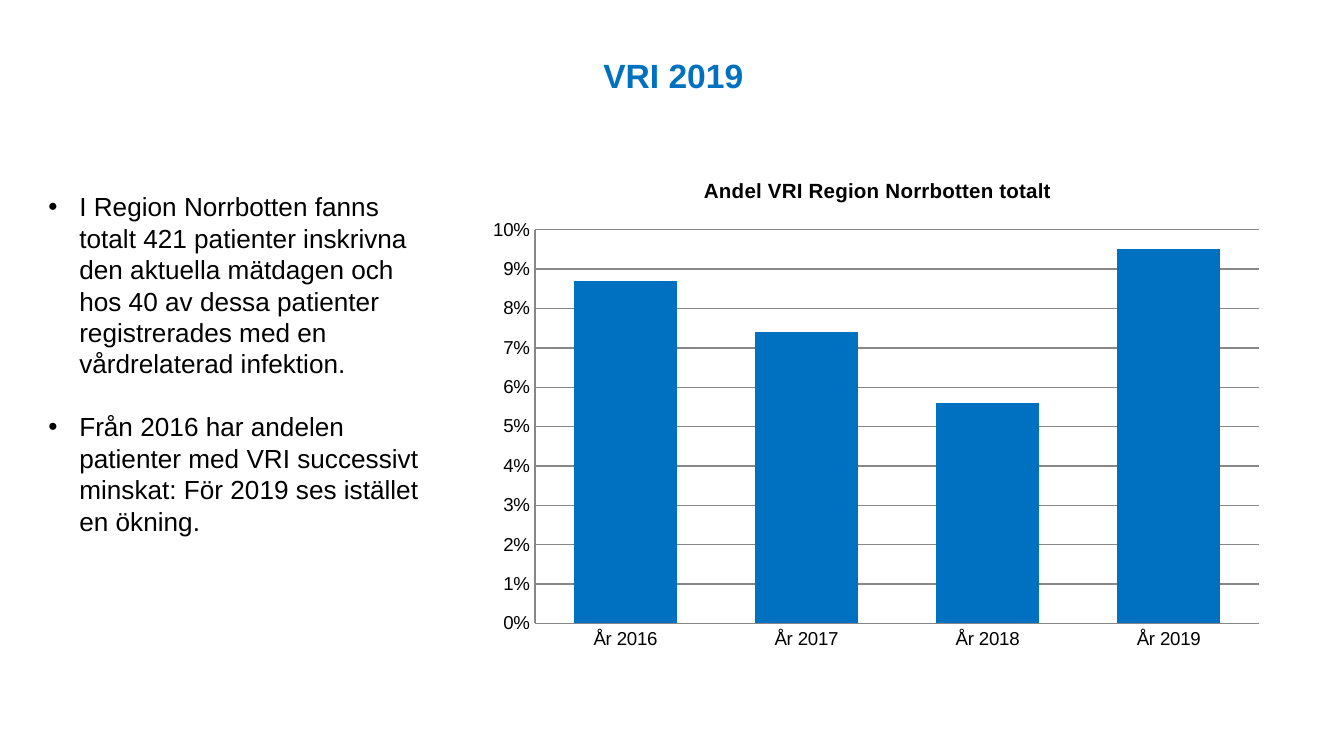
from lxml.etree import SubElement
from pptx import Presentation
from pptx.chart.data import CategoryChartData
from pptx.dml.color import RGBColor
from pptx.enum.chart import XL_CHART_TYPE, XL_TICK_MARK
from pptx.enum.text import MSO_ANCHOR, PP_ALIGN
from pptx.oxml import parse_xml
from pptx.oxml.ns import nsdecls, qn
from pptx.util import Inches, Pt

WIDTH = 10
HEIGHT = WIDTH * 9 / 16
FONT = "Arial"
BLUE, BLACK, GREY = "0070C0", "000000", "878787"

HEADING = "VRI 2019"
FINDINGS = [
    "I Region Norrbotten fanns totalt 421 patienter inskrivna den aktuella mätdagen "
    "och hos 40 av dessa patienter registrerades med en vårdrelaterad infektion.",
    "Från 2016 har andelen patienter med VRI successivt minskat: "
    "För 2019 ses istället en ökning.",
]
CHART_TITLE = "Andel VRI Region Norrbotten totalt"
SERIES_NAME = "Series 1"
SHARES = {"År 2016": 0.087, "År 2017": 0.074, "År 2018": 0.056, "År 2019": 0.095}
CHART_BOX = (3.56, 1.16, 5.94, 3.75)
PLOT_BOX = (0.42, 0.55, 5.39, 2.93)


def colour(value):
    return RGBColor.from_string(value)


def style(font, size, ink=BLACK, bold=False):
    font.name, font.size, font.bold = FONT, Pt(size), bold
    font.color.rgb = colour(ink)


def add_bullet(paragraph, indent):
    properties = paragraph._p.get_or_add_pPr()
    properties.set("marL", str(Inches(indent)))
    properties.set("indent", str(-Inches(indent)))
    SubElement(properties, qn("a:buFont"), typeface=FONT)
    SubElement(properties, qn("a:buChar"), char="•")


def add_text(slide, lines, box, size, ink=BLACK, bold=False, align=PP_ALIGN.LEFT,
             anchor=MSO_ANCHOR.TOP, indent=0, gap=0):
    frame = slide.shapes.add_textbox(*map(Inches, box)).text_frame
    frame.word_wrap = True
    frame.vertical_anchor = anchor
    frame.margin_left = frame.margin_right = Inches(0.07)
    frame.margin_top = frame.margin_bottom = Inches(0.04)
    for number, line in enumerate(lines):
        paragraph = frame.add_paragraph() if number else frame.paragraphs[0]
        if indent:
            add_bullet(paragraph, indent)
        paragraph.alignment = align
        if number:
            paragraph.space_before = Pt(gap)
        run = paragraph.add_run()
        run.text = line
        style(run.font, size, ink, bold)


def place_plot(chart):
    plot_area = chart._chartSpace.chart.plotArea
    for layout in plot_area.findall(qn("c:layout")):
        plot_area.remove(layout)
    modes = "".join(f'<c:{side}Mode val="edge"/>' for side in "xy")
    shares = "".join(f'<c:{side} val="{length / whole:.4f}"/>'
                     for side, length, whole in zip("xywh", PLOT_BOX, CHART_BOX[2:] * 2))
    plot_area.insert(0, parse_xml(
        f'<c:layout {nsdecls("c")}><c:manualLayout><c:layoutTarget val="inner"/>'
        f"{modes}{shares}</c:manualLayout></c:layout>"))


def add_share_chart(slide):
    data = CategoryChartData(number_format="0.0%")
    data.categories = list(SHARES)
    data.add_series(SERIES_NAME, list(SHARES.values()))
    chart = slide.shapes.add_chart(
        XL_CHART_TYPE.COLUMN_CLUSTERED, *map(Inches, CHART_BOX), data).chart
    style(chart.font, 10)
    chart.has_legend = False
    chart.has_title = True
    title = chart.chart_title.text_frame
    title.text = CHART_TITLE
    style(title.paragraphs[0].runs[0].font, 11, bold=True)

    columns = chart.plots[0]
    columns.gap_width, columns.overlap = 75, -25
    columns.vary_by_categories = False
    fill = columns.series[0].format.fill
    fill.solid()
    fill.fore_color.rgb = colour(BLUE)

    years, percent = chart.category_axis, chart.value_axis
    percent.minimum_scale, percent.maximum_scale, percent.major_unit = 0, 0.1, 0.01
    percent.tick_labels.number_format = "0%"
    percent.tick_labels.number_format_is_linked = False
    percent.has_major_gridlines = True
    for axis in (years, percent):
        axis.major_tick_mark = axis.minor_tick_mark = XL_TICK_MARK.NONE
    for line in (years.format.line, percent.format.line, percent.major_gridlines.format.line):
        line.color.rgb = colour(GREY)
        line.width = Pt(0.75)
    place_plot(chart)


def main():
    deck = Presentation()
    deck.slide_width, deck.slide_height = Inches(WIDTH), Inches(HEIGHT)
    slide = deck.slides.add_slide(deck.slide_layouts[6])
    add_text(slide, [HEADING], (1.74, 0.42, 6.54, 0.33), 18, ink=BLUE, bold=True,
             align=PP_ALIGN.CENTER, anchor=MSO_ANCHOR.BOTTOM)
    add_text(slide, FINDINGS, (0.29, 1.38, 2.92, 2.67), 14, indent=0.23, gap=17)
    add_share_chart(slide)
    deck.save("out.pptx")


if __name__ == "__main__":
    main()
